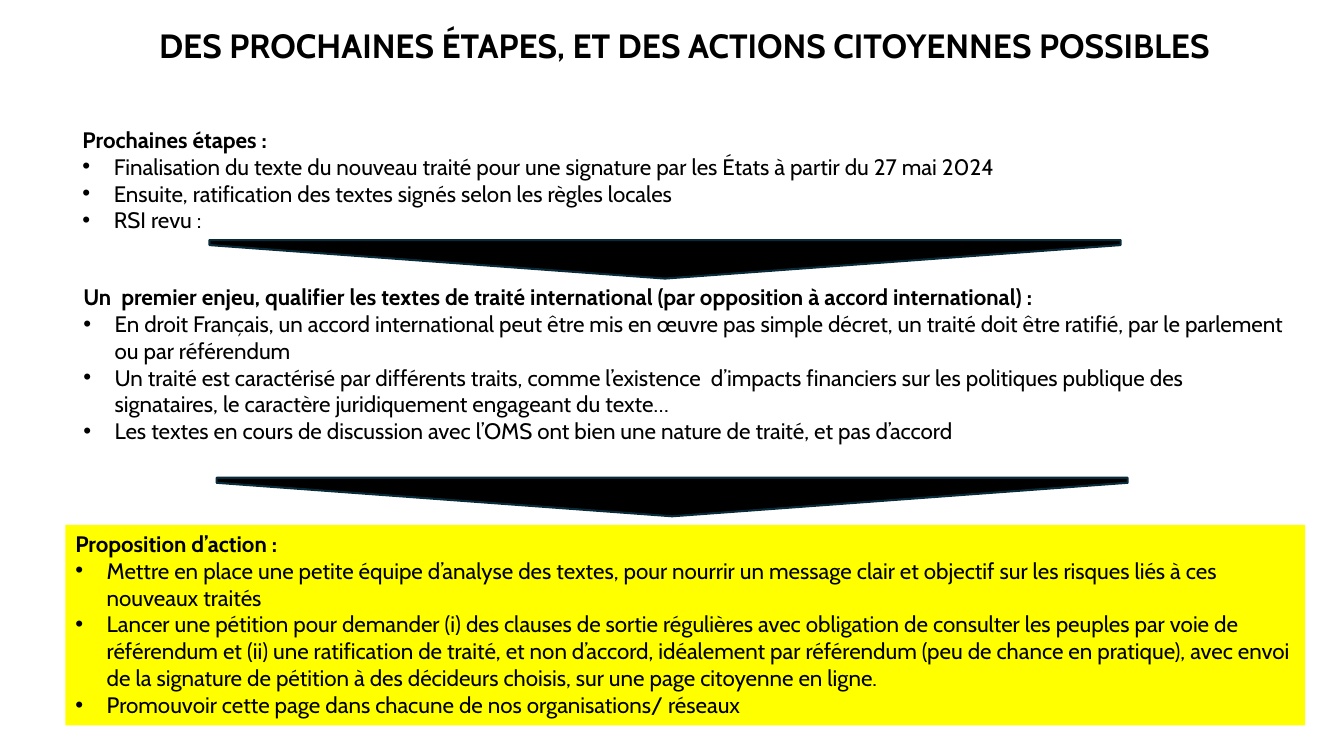
from lxml import etree
from pptx import Presentation
from pptx.dml.color import RGBColor
from pptx.enum import shapes, text
from pptx.oxml import ns
from pptx.util import Cm, Pt

COLOURS = {"ink": "000000", "highlight": "FFFF00", "arrow_edge": "092A39"}
HEADING = {"name": "Cabin", "size": Pt(16), "bold": True}
POINT = {**HEADING, "bold": False}
TITLE = {**HEADING, "size": Pt(24)}
POINT_INDENT = Cm(0.79)


def colour(key):
    return RGBColor.from_string(COLOURS[key])


def write(paragraph, wording, font_format):
    run = paragraph.add_run()
    run.text = wording
    run.font.color.rgb = colour("ink")
    for attribute, value in font_format.items():
        setattr(run.font, attribute, value)


deck = Presentation()
deck.slide_width, deck.slide_height = Cm(33.87), Cm(19.05)
slide = deck.slides.add_slide(deck.slide_layouts[6])

title = slide.shapes.add_textbox(Cm(3.76), Cm(0.46), Cm(27.64), Cm(1.32)).text_frame
title.word_wrap = True
title.vertical_anchor = text.MSO_ANCHOR.BOTTOM
title.paragraphs[0].line_spacing = 0.9
write(title.paragraphs[0], "DES PROCHAINES ÉTAPES, ET DES ACTIONS CITOYENNES POSSIBLES", TITLE)

# Each section: left, top, width, height in cm; fill; heading; points
sections = [
    ((1.83, 3.05, 31.24, 3.0), None, "Prochaines étapes :", [
        "Finalisation du texte du nouveau traité pour une signature par les États "
        "à partir du 27 mai 2024",
        "Ensuite, ratification des textes signés selon les règles locales",
        "RSI revu :",
    ]),
    ((1.85, 7.01, 30.86, 4.37), None,
     "Un  premier enjeu, qualifier les textes de traité international "
     "(par opposition à accord international) :", [
        "En droit Français, un accord international peut être mis en œuvre pas simple décret, "
        "un traité doit être ratifié, par le parlement ou par référendum",
        "Un traité est caractérisé par différents traits, comme l’existence  d’impacts "
        "financiers sur les politiques publique des signataires, le caractère juridiquement "
        "engageant du texte…",
        "Les textes en cours de discussion avec l’OMS ont bien une nature de traité, "
        "et pas d’accord",
     ]),
    ((1.65, 13.23, 31.24, 5.05), "highlight", "Proposition d’action :", [
        "Mettre en place une petite équipe d’analyse des textes, pour nourrir un message clair "
        "et objectif sur les risques liés à ces nouveaux traités",
        "Lancer une pétition pour demander (i) des clauses de sortie régulières avec obligation "
        "de consulter les peuples par voie de référendum et (ii) une ratification de traité, et "
        "non d’accord, idéalement par référendum (peu de chance en pratique), avec envoi de la "
        "signature de pétition à des décideurs choisis, sur une page citoyenne en ligne.",
        "Promouvoir cette page dans chacune de nos organisations/ réseaux",
    ]),
]
for place, fill, heading, points in sections:
    section = slide.shapes.add_textbox(*map(Cm, place))
    if fill:
        section.fill.solid()
        section.fill.fore_color.rgb = colour(fill)
    body = section.text_frame
    body.word_wrap = True
    body.auto_size = text.MSO_AUTO_SIZE.SHAPE_TO_FIT_TEXT
    write(body.paragraphs[0], heading, HEADING)
    for point in points:
        paragraph = body.add_paragraph()
        write(paragraph, point, POINT)
        properties = paragraph._p.get_or_add_pPr()
        properties.set("marL", str(POINT_INDENT))
        properties.set("indent", str(-POINT_INDENT))
        etree.SubElement(properties, ns.qn("a:buFont"), typeface="Arial")
        etree.SubElement(properties, ns.qn("a:buChar"), char="•")

for left, top in [(5.28, 6.05), (5.46, 12.04)]:
    arrow = slide.shapes.add_shape(
        shapes.MSO_SHAPE.DOWN_ARROW, Cm(left), Cm(top), Cm(22.96), Cm(0.97))
    arrow.adjustments[0] = 1
    arrow.adjustments[1] = 0.87
    arrow.shadow.inherit = False
    arrow.fill.solid()
    arrow.fill.fore_color.rgb = colour("ink")
    arrow.line.color.rgb = colour("arrow_edge")
    arrow.line.width = Pt(1.5)

deck.save("out.pptx")
